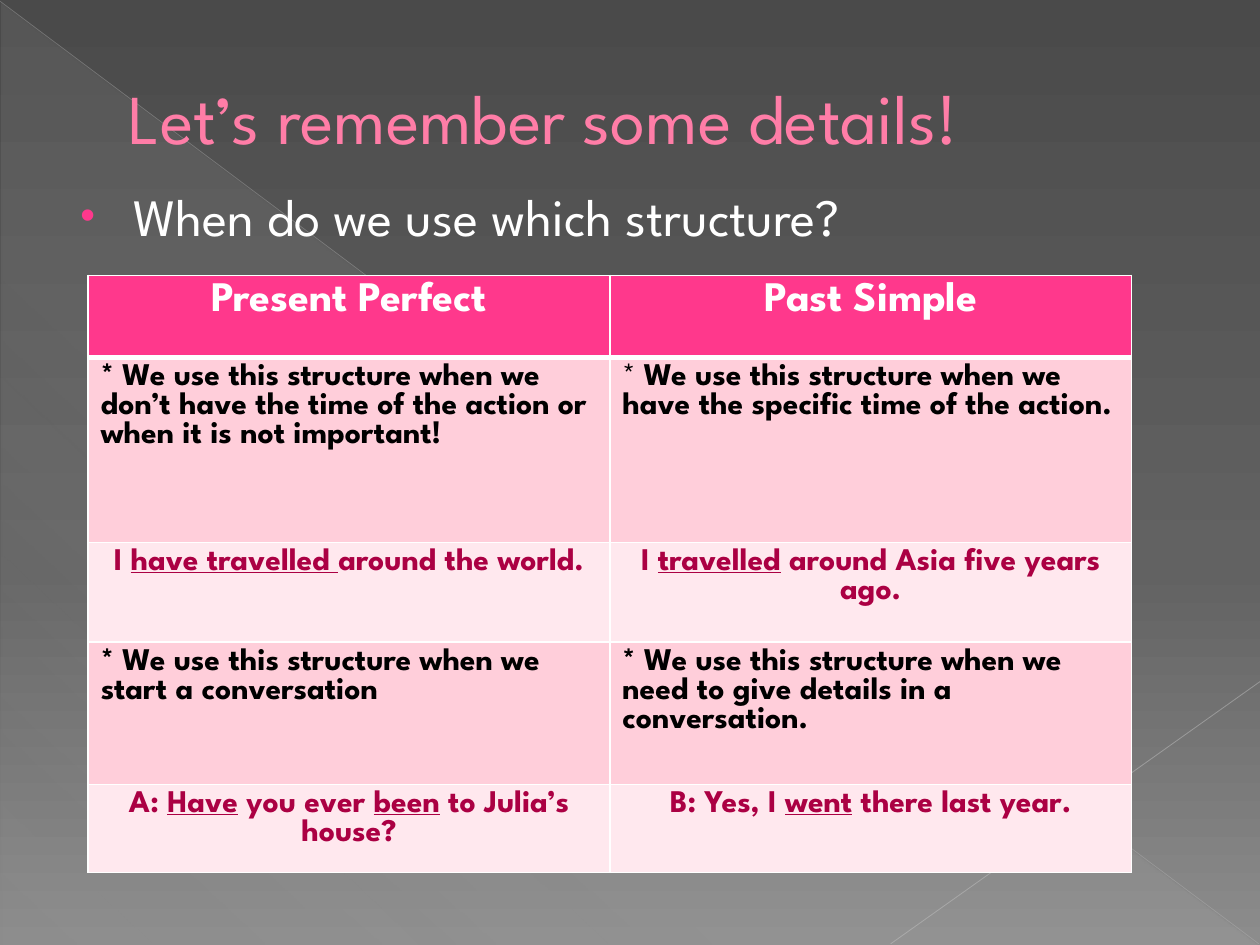
from lxml import etree
from pptx import Presentation
from pptx.dml.color import RGBColor
from pptx.enum.shapes import MSO_CONNECTOR, MSO_SHAPE
from pptx.enum.text import MSO_ANCHOR, PP_ALIGN
from pptx.oxml.ns import qn
from pptx.util import Pt

LINE = MSO_CONNECTOR.STRAIGHT
WEDGE = MSO_SHAPE.RIGHT_TRIANGLE
MIDDLE, TOP = MSO_ANCHOR.MIDDLE, MSO_ANCHOR.TOP
LEFT, CENTER = PP_ALIGN.LEFT, PP_ALIGN.CENTER

FONT = "League Spartan"
WHITE, BLACK, WINE = "FFFFFF", "000000", "AB0043"
PINK, ROSE, BLUSH = "FF388C", "FFCEDA", "FFE8EE"

# Table rows: height, fill, text colour, size, alignment, cells.
# A cell is a list of runs: text and style (b bold, u bold underlined).
ROWS = [
    (46.8, PINK, WHITE, 24, CENTER,
     [[("Present Perfect", "b")], [("Past Simple", "b")]]),
    (105.84, ROSE, BLACK, 18, LEFT,
     [[("* We use this structure when we don’t have the time of the action "
        "or when it is not important!", "b")],
      [("* ", ""), ("We use this structure when we have the specific time "
                    "of the action.", "b")]]),
    (56.88, BLUSH, WINE, 18, CENTER,
     [[("I ", "b"), ("have travelled ", "u"), ("around the world.", "b")],
      [("I ", "b"), ("travelled", "u"),
       (" around Asia five years ago.", "b")]]),
    (81.36, ROSE, BLACK, 18, LEFT,
     [[("* We use this structure when we start a conversation", "b")],
      [("* We use this structure when we need to give details in a "
        "conversation.", "b")]]),
    (46.8, BLUSH, WINE, 18, CENTER,
     [[("A: ", "b"), ("Have", "u"), (" you ever ", "b"), ("been", "u"),
       (" to Julia’s house?", "b")],
      [("B: Yes, I ", "b"), ("went", "u"), (" there last year.", "b")]]),
]


def color(code):
    return RGBColor.from_string(code)


def sub(node, tag, **attrs):
    return etree.SubElement(node, qn(tag), attrs)


def paint(node, code, alpha=100):
    tint = sub(node, "a:srgbClr", val=code)
    if alpha < 100:
        sub(tint, "a:alpha", val=str(alpha * 1000))


def blend(owner, fill, stops, angle):
    """Give the owner a gradient of (place, colour, opacity) stops."""
    fill.gradient()
    grad = next(owner.element.iter(qn("a:gradFill")))
    for child in list(grad):
        grad.remove(child)
    steps = sub(grad, "a:gsLst")
    for place, code, alpha in stops:
        paint(sub(steps, "a:gs", pos=str(place * 1000)), code, alpha)
    sub(grad, "a:lin", ang=str(angle * 60000), scaled="0")


def add_run(para, text, size, code, style=""):
    run = para.add_run()
    run.text = text
    font = run.font
    font.name, font.size = FONT, Pt(size)
    font.color.rgb = color(code)
    font.bold = style != ""
    font.underline = style == "u"
    return run


def add_text(slide, box, anchor):
    frame = slide.shapes.add_textbox(*map(Pt, box)).text_frame
    frame.word_wrap = True
    frame.vertical_anchor = anchor
    return frame.paragraphs[0]


def indent(para, margin, hang):
    props = para._p.get_or_add_pPr()
    props.set("marL", str(Pt(margin)))
    props.set("indent", str(Pt(hang)))
    return props


def add_line(slide, start, end, code, width, alpha):
    line = slide.shapes.add_connector(LINE, *map(Pt, start + end))
    line.line.width = Pt(width)
    line.line.color.rgb = color(code)
    tint = next(line.element.spPr.iter(qn("a:srgbClr")))
    sub(tint, "a:alpha", val=str(alpha * 1000))
    sub(line.element.spPr, "a:effectLst")


def add_backdrop(slide, box):
    x, y, w, h = box
    blend(slide, slide.background.fill,
          [(0, "4A4A4A", 100), (60, "626262", 100), (100, "8C8C8C", 100)], 90)
    # Pale wedge
    wedge = slide.shapes.add_shape(
        WEDGE, Pt(x + 0.7), Pt(y + 1.4), Pt(w - 1.4), Pt(h - 1.4))
    wedge.shadow.inherit = False
    wedge.line.fill.background()
    blend(wedge, wedge.fill,
          [(0, "D2D2D2", 10), (70, "D2D2D2", 8), (100, "D2D2D2", 1)], 133)
    # Thin diagonals
    add_line(slide, (x, y + 0.7), (x + w - 0.7, y + h - 0.7),
             "BFBFBF", 0.39, 35)
    add_line(slide, (x + w, y + 389.5), (x + 509, y + h - 0.7),
             "C6C6C6", 0.47, 45)


def add_title(slide, box):
    para = add_text(slide, box, MIDDLE)
    indent(para, 38.2, 0)
    run = add_run(para, "Let’s remember some details!", 40, "FF7DA7")
    # Letter outline
    edge = etree.Element(qn("a:ln"), w=str(Pt(0.5)))
    paint(sub(edge, "a:solidFill"), "B12761")
    run.font._element.insert(0, edge)


def add_body(slide, box):
    para = add_text(slide, box, TOP)
    para.space_before = Pt(6)
    props = indent(para, 35.3, -30.2)
    # Bullet
    paint(sub(props, "a:buClr"), PINK)
    sub(props, "a:buSzPct", val="80000")
    sub(props, "a:buFont", typeface="Arial")
    sub(props, "a:buChar", char="•")
    add_run(para, "When do we use which structure?", 30, WHITE)


def add_borders(cell, top, bottom):
    props = cell._tc.get_or_add_tcPr()
    sides = [("L", 1), ("R", 1), ("T", top), ("B", bottom)]
    for spot, (side, width) in enumerate(sides):
        edge = etree.Element(qn("a:ln" + side), w=str(Pt(width)))
        paint(sub(edge, "a:solidFill"), WHITE)
        props.insert(spot, edge)


def add_grid(slide, box):
    x, y, w = box
    high = sum(row[0] for row in ROWS)
    table = slide.shapes.add_table(
        len(ROWS), 2, Pt(x), Pt(y), Pt(w), Pt(high)).table
    for col in table.columns:
        col.width = Pt(w / 2)
    for r, (height, fill, code, size, align, cells) in enumerate(ROWS):
        table.rows[r].height = Pt(height)
        for c, runs in enumerate(cells):
            cell = table.cell(r, c)
            cell.fill.solid()
            cell.fill.fore_color.rgb = color(fill)
            # Thick rule under the header
            add_borders(cell, 3 if r == 1 else 1, 3 if r == 0 else 1)
            para = cell.text_frame.paragraphs[0]
            para.alignment = align
            for text, style in runs:
                add_run(para, text, size, code, style)


def main():
    deck = Presentation()
    deck.slide_width, deck.slide_height = Pt(720), Pt(540)
    slide = deck.slides.add_slide(deck.slide_layouts[6])
    add_backdrop(slide, (0, 0, 720, 540))
    add_title(slide, (28.1, 11.5, 667.4, 110.2))
    add_body(slide, (33.8, 101.5, 648, 382.3))
    add_grid(slide, (50.4, 157.4, 596.2))
    deck.save("out.pptx")


if __name__ == "__main__":
    main()
